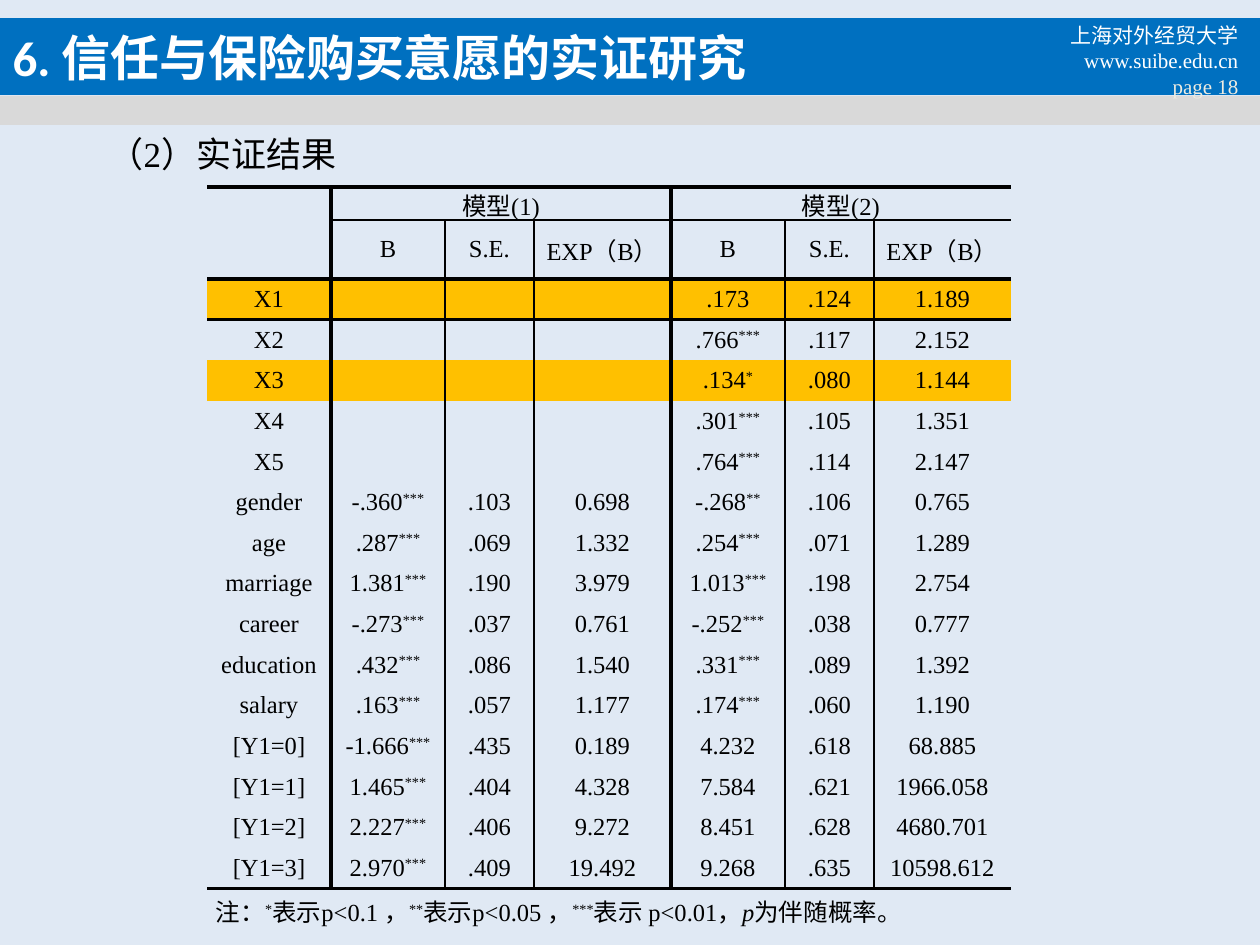
from itertools import groupby

from lxml.etree import SubElement
from pptx import Presentation
from pptx.dml.color import RGBColor
from pptx.enum.shapes import MSO_SHAPE as SHAPE
from pptx.enum.text import MSO_ANCHOR as ANCHOR, PP_ALIGN as ALIGN
from pptx.oxml.ns import qn
from pptx.util import Emu, Pt

PX = 914400 // 126
LATIN, CJK = "Times New Roman", "Noto Sans CJK SC"
BACKGROUND, BLUE, GRAY, AMBER = "E0E9F4", "0070C0", "D9D9D9", "FFC000"
WHITE, CREAM, BLACK = "FFFFFF", "EEECE1", "000000"
NO_STYLE = "{2D5ABB26-0587-4C30-8999-92F81FD0307C}"

TITLE = "6. 信任与保险购买意愿的实证研究"
SUBTITLE = "（2）实证结果"
SCHOOL, SITE, PAGE = "上海对外经贸大学", "www.suibe.edu.cn", "page 18"

MODELS = {1: "模型(1)", 4: "模型(2)"}
STATISTICS = ["", *["B", "S.E.", "EXP（B）"] * 2]
RESULTS = [
    ("X1", "", "", "", ".173", ".124", "1.189"),
    ("X2", "", "", "", ".766***", ".117", "2.152"),
    ("X3", "", "", "", ".134*", ".080", "1.144"),
    ("X4", "", "", "", ".301***", ".105", "1.351"),
    ("X5", "", "", "", ".764***", ".114", "2.147"),
    ("gender", "-.360***", ".103", "0.698", "-.268**", ".106", "0.765"),
    ("age", ".287***", ".069", "1.332", ".254***", ".071", "1.289"),
    ("marriage", "1.381***", ".190", "3.979", "1.013***", ".198", "2.754"),
    ("career", "-.273***", ".037", "0.761", "-.252***", ".038", "0.777"),
    ("education", ".432***", ".086", "1.540", ".331***", ".089", "1.392"),
    ("salary", ".163***", ".057", "1.177", ".174***", ".060", "1.190"),
    ("[Y1=0]", "-1.666***", ".435", "0.189", "4.232", ".618", "68.885"),
    ("[Y1=1]", "1.465***", ".404", "4.328", "7.584", ".621", "1966.058"),
    ("[Y1=2]", "2.227***", ".406", "9.272", "8.451", ".628", "4680.701"),
    ("[Y1=3]", "2.970***", ".409", "19.492", "9.268", ".635", "10598.612"),
]
HIGHLIGHTED = ("X1", "X3")
NOTE = ["注：", "*", "表示p<0.1 ，", "**", "表示p<0.05 ，", "***",
        "表示 p<0.01，", "p", "为伴随概率。"]

COLUMNS = [124, 114, 89, 137, 114, 89, 137]
HEADER_HEIGHTS = [33, 47]
RESULTS_HEIGHT = 610
NOTE_ROW = len(HEADER_HEIGHTS) + len(RESULTS)
THICK, THIN = 2.25, 1
# Line widths by the row above which, or the column left of which, they run
ROW_LINES = {0: THICK, 1: THIN, 2: THICK, NOTE_ROW: THICK}
COLUMN_LINES = {1: THICK, 2: THIN, 3: THIN, 4: THICK, 5: THIN, 6: THIN}


def color(value):
    return RGBColor.from_string(value)


def box(*lengths):
    return [Emu(length * PX) for length in lengths]


def place(sp, *lengths):
    sp.left, sp.top, sp.width, sp.height = box(*lengths)


def fill(target, value):
    target.fill.solid()
    target.fill.fore_color.rgb = color(value)


def style(r, size, value=BLACK, font=LATIN):
    r.font.size, r.font.name = Pt(size), font
    r.font.color.rgb = color(value)
    SubElement(r.font._element, qn("a:ea"), typeface=CJK)


def add_run(p, text, font=LATIN):
    """Add a table run; asterisks alone are raised."""
    r = p.add_run()
    r.text = text
    style(r, 14, font=font)
    if not text.strip("*"):
        r.font._element.set("baseline", "30000")
    return r


def is_cjk(char):
    return ord(char) > 0x2E80


def add_value(p, text):
    """Write a table entry as CJK runs, Latin runs and raised asterisks."""
    number = text.rstrip("*")
    for cjk, chars in groupby(number, is_cjk):
        add_run(p, "".join(chars), CJK if cjk else LATIN)
    if number != text:
        add_run(p, text[len(number):])


def draw_borders(cell, row, col):
    if row == NOTE_ROW:
        lines = {"T": ROW_LINES[row]}
    else:
        edges = {c: w for c, w in COLUMN_LINES.items() if row > 0 or c in MODELS}
        rules = {r: w for r, w in ROW_LINES.items() if r != 1 or col > 0}
        lines = {"L": edges.get(col), "R": edges.get(col + 1),
                 "T": rules.get(row), "B": rules.get(row + 1)}
    tc_pr = cell._tc.get_or_add_tcPr()
    for side, width in lines.items():
        if width:
            ln = SubElement(tc_pr, qn(f"a:ln{side}"), w=str(Pt(width)))
            SubElement(SubElement(ln, qn("a:solidFill")), qn("a:srgbClr"), val=BLACK)


def add_results_table(slide):
    frame = slide.shapes.add_table(
        NOTE_ROW + 1, len(COLUMNS), *box(207, 187, sum(COLUMNS), 730))
    table = frame.table
    table.first_row = table.horz_banding = False
    table._tbl.tblPr.find(qn("a:tableStyleId")).text = NO_STYLE
    for column, width in zip(table.columns, COLUMNS):
        column.width = Emu(width * PX)
    for i, row in enumerate(table.rows):
        row.height = Emu(HEADER_HEIGHTS[i] * PX if i < len(HEADER_HEIGHTS)
                         else RESULTS_HEIGHT * PX // len(RESULTS))

    models = [MODELS.get(c, "") for c in range(len(COLUMNS))]
    for i, values in enumerate([models, STATISTICS, *RESULTS, [""] * len(COLUMNS)]):
        for j, text in enumerate(values):
            cell = table.cell(i, j)
            cell.margin_left = cell.margin_right = Emu(9 * PX)
            cell.margin_top = cell.margin_bottom = 0
            cell.vertical_anchor = ANCHOR.MIDDLE
            draw_borders(cell, i, j)
            if values[0] in HIGHLIGHTED:
                fill(cell, AMBER)
            else:
                cell.fill.background()
            p = cell.text_frame.paragraphs[0]
            p.alignment = ALIGN.CENTER
            add_value(p, text)

    table.cell(0, 0).merge(table.cell(1, 0))
    for col in MODELS:
        table.cell(0, col).merge(table.cell(0, col + 2))
    note = table.cell(NOTE_ROW, 0)
    note.merge(table.cell(NOTE_ROW, len(COLUMNS) - 1))
    note.vertical_anchor = ANCHOR.BOTTOM
    p = note.text_frame.paragraphs[0]
    p.alignment = ALIGN.LEFT
    for text in NOTE:
        r = add_run(p, text)
        if text == "p":
            r.font.italic = True


def add_header(slide):
    bar = slide.shapes.add_shape(SHAPE.RECTANGLE, *box(0, 96, 1260, 29))
    bar.shadow.inherit = False
    fill(bar, GRAY)
    bar.line.fill.background()

    title = slide.shapes.title
    place(title, 0, 18, 1260, 77)
    fill(title, BLUE)
    tf = title.text_frame
    tf.text = TITLE
    tf.vertical_anchor = ANCHOR.MIDDLE
    p = tf.paragraphs[0]
    p.alignment = ALIGN.LEFT
    style(p.runs[0], 28, WHITE, "Calibri")
    p.runs[0].font.bold = True

    tf = slide.shapes.add_textbox(*box(958, 22, 293, 77)).text_frame
    tf.word_wrap = True
    tf.vertical_anchor = ANCHOR.MIDDLE
    tf.text = f"{SCHOOL}\n{SITE}\v{PAGE}"
    for p in tf.paragraphs:
        p.alignment = ALIGN.RIGHT
        for r in p.runs:
            style(r, 12, CREAM if r.text == PAGE else WHITE)


def add_subtitle(slide):
    body = slide.placeholders[1]
    place(body, 49, 118, 1113, 624)
    body.text_frame.text = SUBTITLE
    p = body.text_frame.paragraphs[0]
    p.line_spacing, p.space_before, p.space_after = 1.2, Pt(0), Pt(6)
    p_pr = p._p.get_or_add_pPr()
    p_pr.set("marL", str(47 * PX))
    p_pr.set("indent", "0")
    SubElement(p_pr, qn("a:buNone"))
    style(p.runs[0], 20)


def main():
    prs = Presentation()
    prs.slide_width, prs.slide_height = box(1260, 945)
    slide = prs.slides.add_slide(prs.slide_layouts[1])
    fill(slide.background, BACKGROUND)
    add_header(slide)
    add_results_table(slide)
    add_subtitle(slide)
    prs.save("out.pptx")


if __name__ == "__main__":
    main()
